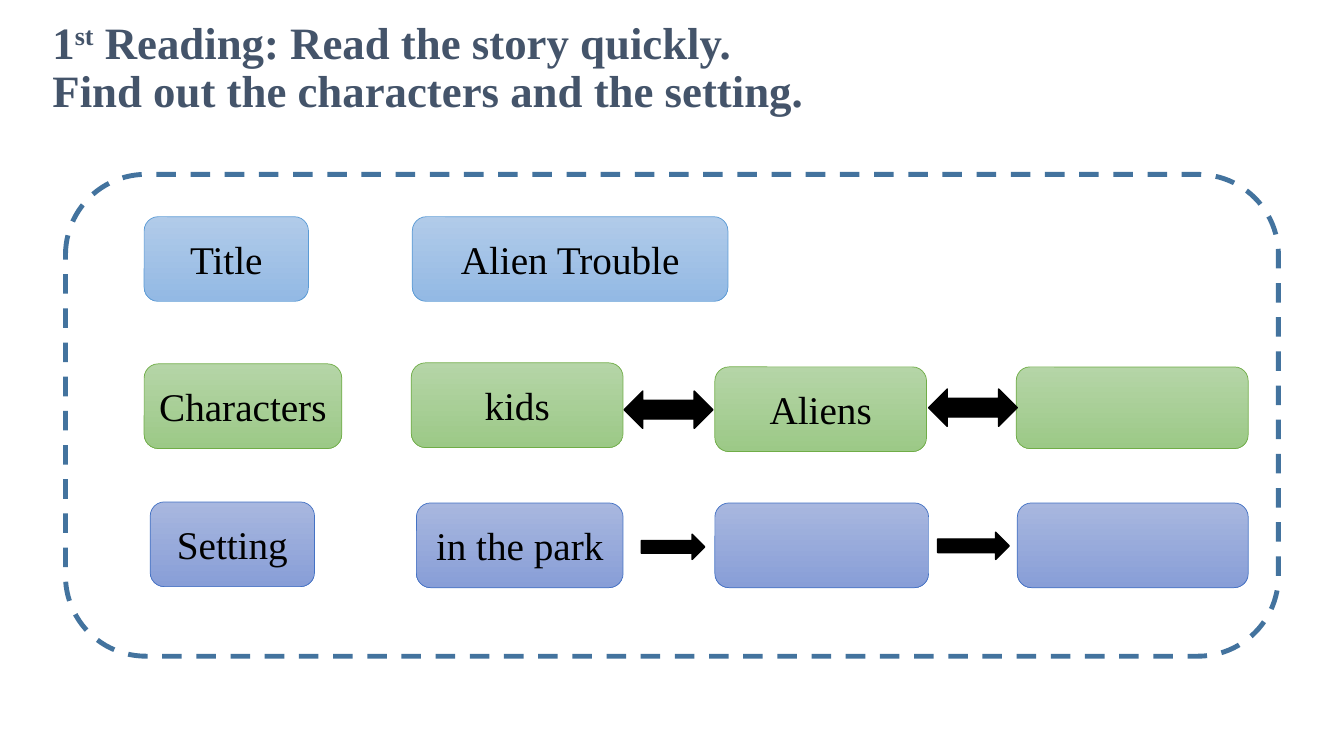
"""Build the first-reading slide with its title, characters and setting map."""
from dataclasses import dataclass

from pptx import Presentation
from pptx.dml.color import RGBColor
from pptx.enum.dml import MSO_LINE_DASH_STYLE as Dash
from pptx.enum.shapes import MSO_SHAPE as Shape
from pptx.enum.text import MSO_ANCHOR as Anchor, MSO_AUTO_SIZE as AutoSize, PP_ALIGN as Align
from pptx.shapes.autoshape import Shape as AutoShape
from pptx.slide import Slide
from pptx.text.text import Font
from pptx.util import Emu, Pt

PX_PER_INCH = 100
FONT_NAME = "Times New Roman"
BLACK = "000000"


@dataclass(frozen=True)
class Palette:
    top: str
    bottom: str
    outline: str


@dataclass(frozen=True)
class Card:
    left: int
    top: int
    width: int
    palette: Palette
    text: str = ""
    height: int = 84


@dataclass(frozen=True)
class Arrow:
    kind: Shape
    left: int
    top: int
    width: int
    height: int


BLUE = Palette("B1CBE9", "93B9E4", "5B9BD5")
GREEN = Palette("B5D5A7", "9CC987", "70AD47")
INDIGO = Palette("A8B7DF", "889ED7", "4472C4")

CARDS = [
    Card(143, 215, 163, BLUE, "Title"),
    Card(409, 215, 313, BLUE, "Alien Trouble"),
    Card(143, 361, 196, GREEN, "Characters"),
    Card(408, 360, 210, GREEN, "kids"),
    Card(709, 364, 210, GREEN, "Aliens"),
    Card(1008, 364, 230, GREEN, height=81),
    Card(149, 498, 163, INDIGO, "Setting"),
    Card(413, 499, 205, INDIGO, "in the park"),
    Card(709, 499, 212, INDIGO),
    Card(1009, 499, 229, INDIGO),
]

ARROWS = [
    Arrow(Shape.LEFT_RIGHT_ARROW, 619, 388, 88, 37),
    Arrow(Shape.LEFT_RIGHT_ARROW, 921, 386, 88, 37),
    Arrow(Shape.RIGHT_ARROW, 636, 530, 63, 25),
    Arrow(Shape.RIGHT_ARROW, 930, 528, 71, 27),
]


def px(length: int) -> Emu:
    return Emu(length * 914400 // PX_PER_INCH)


def color(value: str) -> RGBColor:
    return RGBColor.from_string(value)


def style_font(font: Font, size: int, value: str, bold: bool = False) -> None:
    font.name = FONT_NAME
    font.size = Pt(size)
    font.bold = bold
    font.color.rgb = color(value)


def add_outlined(slide: Slide, kind: Shape, left: int, top: int, width: int,
                 height: int, outline: str, weight: float) -> AutoShape:
    box = slide.shapes.add_shape(kind, px(left), px(top), px(width), px(height))
    box.shadow.inherit = False
    box.line.color.rgb = color(outline)
    box.line.width = Pt(weight)
    return box


def add_card(slide: Slide, card: Card) -> None:
    box = add_outlined(slide, Shape.ROUNDED_RECTANGLE, card.left, card.top,
                       card.width, card.height, card.palette.outline, 0.5)
    box.fill.gradient()
    box.fill.gradient_angle = 270
    for stop, value in zip(box.fill.gradient_stops, (card.palette.top, card.palette.bottom)):
        stop.color.rgb = color(value)
    if card.text:
        frame = box.text_frame
        frame.text = card.text
        frame.vertical_anchor = Anchor.MIDDLE
        para = frame.paragraphs[0]
        para.alignment = Align.CENTER
        style_font(para.runs[0].font, 28, BLACK)


def add_arrow(slide: Slide, arrow: Arrow) -> None:
    box = add_outlined(slide, arrow.kind, arrow.left, arrow.top,
                       arrow.width, arrow.height, BLACK, 1)
    box.fill.solid()
    box.fill.fore_color.rgb = color(BLACK)


def add_border(slide: Slide) -> None:
    border = add_outlined(slide, Shape.ROUNDED_RECTANGLE, 65, 173, 1203, 478, "43739E", 3.5)
    border.fill.background()
    border.line.dash_style = Dash.DASH


def fill_title(slide: Slide) -> None:
    title = slide.shapes.title
    title.left, title.top, title.width, title.height = px(42), px(15), px(1245), px(107)
    title.fill.solid()
    title.fill.fore_color.rgb = color("FFFFFF")
    frame = title.text_frame
    frame.text = "1"
    frame.word_wrap = True
    frame.auto_size = AutoSize.SHAPE_TO_FIT_TEXT
    frame.vertical_anchor = Anchor.MIDDLE
    para = frame.paragraphs[0]
    para.alignment = Align.LEFT
    para.line_spacing = 0.9
    ordinal = para.add_run()
    ordinal.text = "st"
    para.add_run().text = " Reading: Read the story quickly."
    para.add_line_break()
    para.add_run().text = "Find out the characters and the setting."
    for span in para.runs:
        style_font(span.font, 32, "44546A", bold=True)
    ordinal._r.get_or_add_rPr().set("baseline", "30000")


def main() -> None:
    deck = Presentation()
    deck.slide_width, deck.slide_height = px(1333), px(750)
    page = deck.slides.add_slide(deck.slide_layouts[5])
    fill_title(page)
    for card in CARDS:
        add_card(page, card)
    for arrow in ARROWS:
        add_arrow(page, arrow)
    add_border(page)
    deck.save("out.pptx")


if __name__ == "__main__":
    main()
